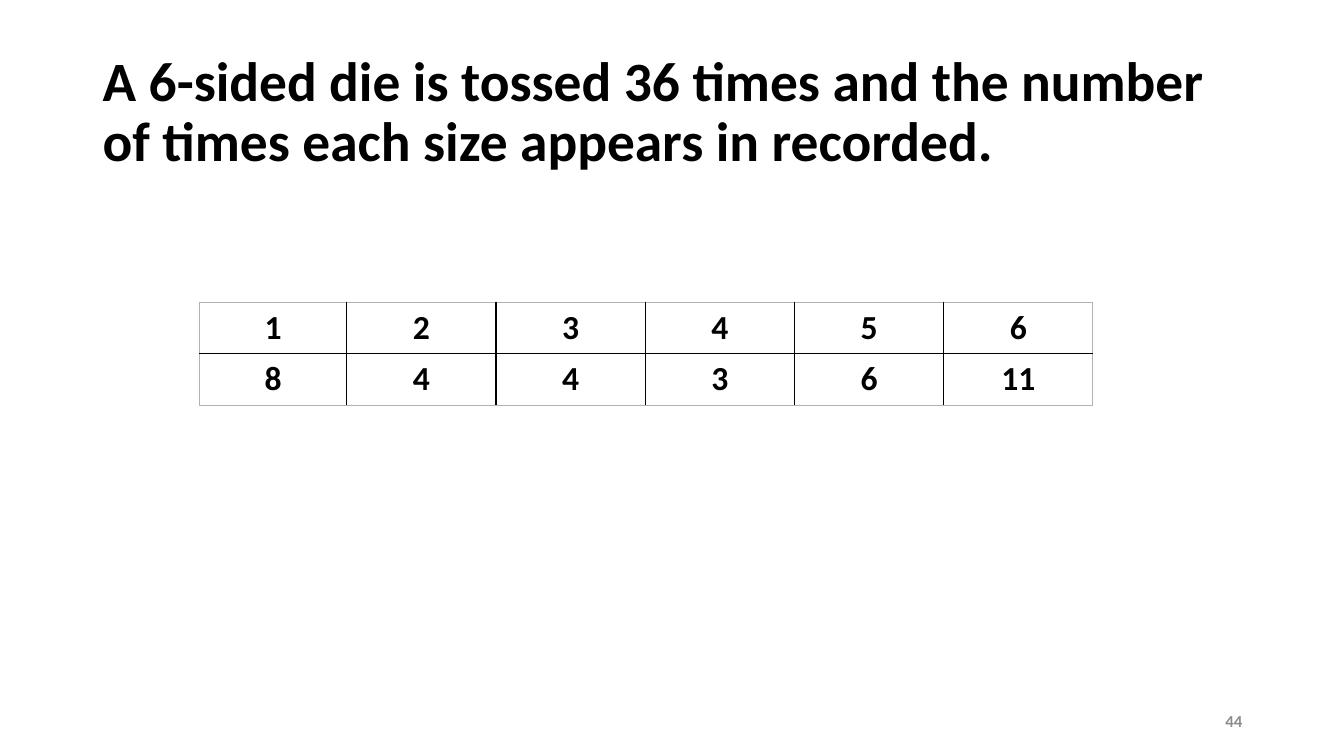
from lxml import etree
from pptx import Presentation
from pptx import util as u
from pptx.dml.color import RGBColor
from pptx.enum import text
from pptx.oxml import ns

COLORS = {"ink": "000000", "outline": "B2B2B2", "page_number": "8C8C8C"}
FONT = "Calibri"
TOSSES = [
    ["1", "2", "3", "4", "5", "6"],
    ["8", "4", "4", "3", "6", "11"],
]
FIRST_WIDTH, OTHER_WIDTH, ROW_HEIGHT = 1.46, 1.48, 0.51


def write(frame, wording, size, color="ink", align=text.PP_ALIGN.LEFT, spacing=1.0):
    """Fill a text frame with one bold paragraph."""
    paragraph = frame.paragraphs[0]
    paragraph.alignment = align
    paragraph.line_spacing = spacing
    run = paragraph.add_run()
    run.text = wording
    run.font.name = FONT
    run.font.size = u.Pt(size)
    run.font.bold = True
    run.font.color.rgb = RGBColor.from_string(COLORS[color])


def add_text(slide, wording, left, top, width, height, **text_format):
    box = slide.shapes.add_textbox(
        u.Inches(left), u.Inches(top), u.Inches(width), u.Inches(height)
    )
    box.text_frame.word_wrap = True
    box.text_frame.vertical_anchor = text.MSO_ANCHOR.MIDDLE
    write(box.text_frame, wording, **text_format)


def set_borders(cell, edge_colors):
    """Draw the cell's borders; edge_colors maps L, R, T, B to colour names."""
    properties = cell._tc.get_or_add_tcPr()
    for position, (side, color) in enumerate(edge_colors.items()):
        line = etree.Element(ns.qn(f"a:ln{side}"), w=str(u.Pt(1)))
        fill = etree.SubElement(line, ns.qn("a:solidFill"))
        etree.SubElement(fill, ns.qn("a:srgbClr"), val=COLORS[color])
        properties.insert(position, line)


def add_toss_table(slide, left, top):
    row_count, column_count = len(TOSSES), len(TOSSES[0])
    widths = [FIRST_WIDTH] + [OTHER_WIDTH] * (column_count - 1)
    table = slide.shapes.add_table(
        row_count, column_count, u.Inches(left), u.Inches(top),
        u.Inches(sum(widths)), u.Inches(ROW_HEIGHT * row_count),
    ).table
    table.first_row = table.horz_banding = False
    for column, width in zip(table.columns, widths):
        column.width = u.Inches(width)
    for r, counts in enumerate(TOSSES):
        table.rows[r].height = u.Inches(ROW_HEIGHT)
        for c, count in enumerate(counts):
            cell = table.cell(r, c)
            cell.fill.background()
            write(cell.text_frame, count, size=24, align=text.PP_ALIGN.CENTER)
            on_outline = {
                "L": c == 0,
                "R": c == column_count - 1,
                "T": r == 0,
                "B": r == row_count - 1,
            }
            set_borders(cell, {side: "outline" if outer else "ink"
                               for side, outer in on_outline.items()})


def main():
    deck = Presentation()
    deck.slide_width, deck.slide_height = u.Inches(13.33), u.Inches(7.5)
    slide = deck.slides.add_slide(deck.slide_layouts[6])
    add_text(
        slide,
        "A 6-sided die is tossed 36 times and the number of times each size "
        "appears in recorded.",
        0.92, 0.4, 11.5, 1.45, size=39.6, spacing=0.9,
    )
    add_toss_table(slide, 1.98, 3)
    add_text(slide, "44", 9.42, 6.95, 3, 0.4, size=12, color="page_number",
             align=text.PP_ALIGN.RIGHT)
    deck.save("out.pptx")


if __name__ == "__main__":
    main()
